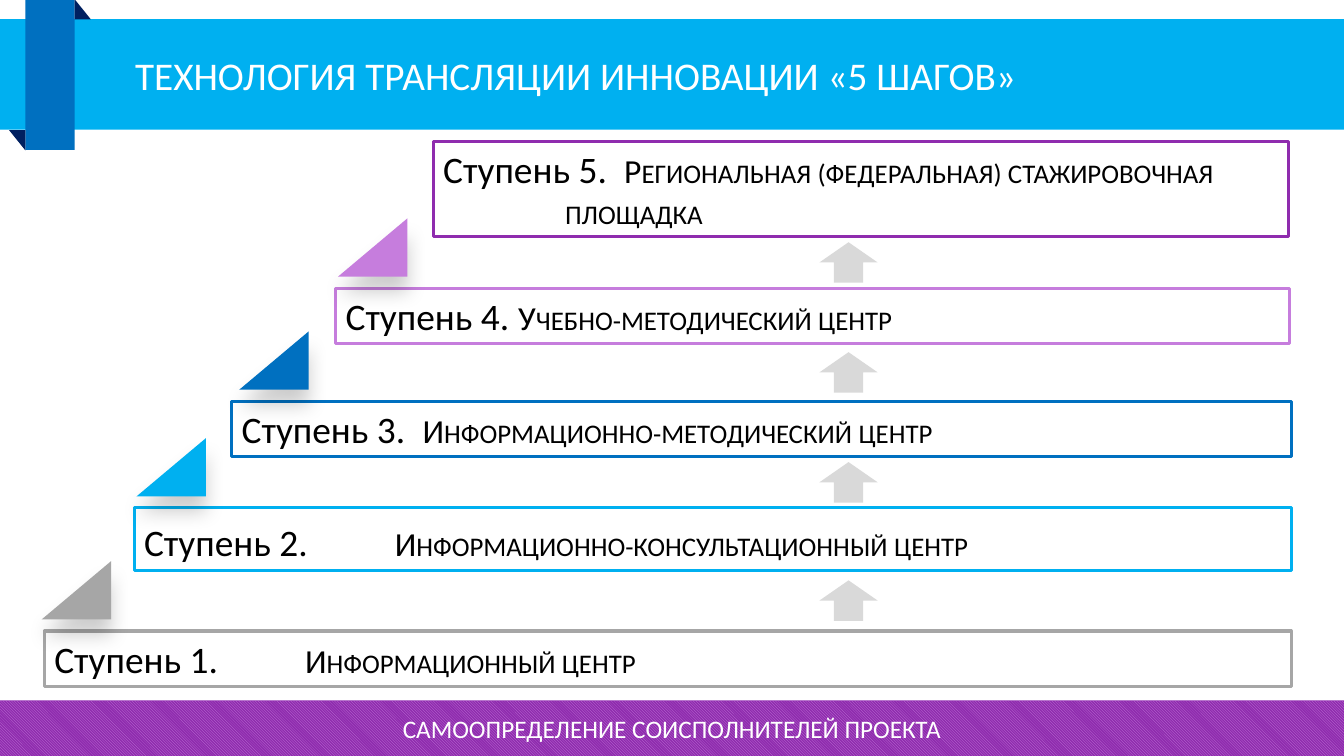
from lxml import etree
from pptx import Presentation
from pptx.dml.color import RGBColor
from pptx.enum.dml import MSO_PATTERN
from pptx.enum.shapes import MSO_SHAPE
from pptx.enum.text import MSO_ANCHOR, PP_ALIGN
from pptx.oxml.ns import qn
from pptx.util import Cm, Pt

RECTANGLE = MSO_SHAPE.RECTANGLE
TRIANGLE = MSO_SHAPE.ISOSCELES_TRIANGLE
CORNER = MSO_SHAPE.RIGHT_TRIANGLE
ARROW = MSO_SHAPE.UP_ARROW
MIDDLE = MSO_ANCHOR.MIDDLE
LEFT, CENTER = PP_ALIGN.LEFT, PP_ALIGN.CENTER
FONT = "Calibri"

COLORS = {
    "white": "FFFFFF", "black": "000000", "gray": "A6A6A6", "light gray": "D9D9D9",
    "sky": "00B0F0", "blue": "0070C0", "navy": "002060",
    "lilac": "C67DDD", "purple": "8F2CAE",
}

TITLE = "ТЕХНОЛОГИЯ ТРАНСЛЯЦИИ ИННОВАЦИИ «5 ШАГОВ»"
FOOTER = "САМООПРЕДЕЛЕНИЕ СОИСПОЛНИТЕЛЕЙ ПРОЕКТА"

# Label, gap (text, size, extra spacing), name, hanging indent in cm
STEP_TEXTS = [
    ("Ступень 1.", ("\t", 26.7, 0), "Информационный центр", 6.32),
    ("Ступень 2.", ("\t", 30.7, 0), "Информационно-консультационный центр", 6.32),
    ("Ступень 3.", (" ", 26.7, 6), "Информационно-методический центр", 6.32),
    ("Ступень 4.", (" ", 26.7, 0), "Учебно-методический центр", 6.32),
    ("Ступень 5.", (" ", 26.7, 6),
     "Региональная (федеральная) стажировочная площадка", 3.07),
]
# Color, box (left, top, width, height) in cm, left of the corner above it
STEP_BOXES = [
    ("gray", (1.12, 15.9, 31.42, 1.4), 1.19),
    ("sky", (3.38, 12.8, 29.16, 1.57), 3.58),
    ("blue", (5.84, 10.11, 26.7, 1.4), 6.17),
    ("lilac", (8.46, 7.26, 24.03, 1.4), 8.66),
    ("purple", (10.92, 3.56, 21.56, 2.41), None),
]
CORNER_WIDTH, CORNER_HEIGHT, CORNER_RISE = 1.47, 1.75, 1.9
ARROW_LEFT, ARROW_WIDTH, ARROW_HEIGHT = 20.65, 1.47, 1.02
# Kind, place in cm, color, rotation
RIBBON = [
    (RECTANGLE, (0, 0.48, 33.87, 2.79), "sky", 0),
    (RECTANGLE, (0.64, 0, 1.24, 3.78), "blue", 0),
    (TRIANGLE, (0.18, 3.33, 0.51, 0.41), "navy", 270),
    (TRIANGLE, (1.83, 0.03, 0.51, 0.41), "navy", 90),
]


def color(name):
    return RGBColor.from_string(COLORS[name])


def add_shape(kind, place, fill, rotation=0):
    shape = slide.shapes.add_shape(kind, *map(Cm, place))
    shape.shadow.inherit = False
    shape.fill.solid()
    shape.fill.fore_color.rgb = color(fill)
    shape.line.fill.background()
    shape.rotation = rotation
    if kind == TRIANGLE:
        shape.adjustments[0] = 1
    return shape


def add_shadow(shape):
    effects = shape._element.spPr.find(qn("a:effectLst"))
    shadow = etree.SubElement(
        effects, qn("a:outerShdw"), blurRad=str(Pt(14)), dist=str(Pt(11)),
        dir="5400000", algn="ctr", rotWithShape="0")
    black = etree.SubElement(shadow, qn("a:srgbClr"), val=COLORS["black"])
    etree.SubElement(black, qn("a:alpha"), val="20000")


def format_run(run, size, color_name):
    run.font.name = FONT
    run.font.size = Pt(size)
    run.font.bold = False
    run.font.color.rgb = color(color_name)


def write_step(shape, label, gap, name, indent):
    frame = shape.text_frame
    frame.word_wrap = True
    frame.vertical_anchor = MIDDLE
    paragraph = frame.paragraphs[0]
    paragraph.alignment = LEFT
    properties = paragraph._p.get_or_add_pPr()
    properties.set("marL", str(Cm(indent)))
    properties.set("indent", str(-Cm(indent)))
    gap_text, gap_size, spacing = gap
    for text, size in ((label, 26.7), (gap_text, gap_size), (name, 24)):
        run = paragraph.add_run()
        run.text = text
        format_run(run, size, "black")
        if text == gap_text and spacing:
            run.font._element.set("spc", str(spacing * 100))
    run.font._element.set("cap", "small")


def write_line(shape, text, size, alignment):
    frame = shape.text_frame
    frame.text = text
    frame.word_wrap = True
    frame.vertical_anchor = MIDDLE
    paragraph = frame.paragraphs[0]
    paragraph.alignment = alignment
    format_run(paragraph.runs[0], size, "white")
    return paragraph


presentation = Presentation()
presentation.slide_width = Cm(33.87)
presentation.slide_height = Cm(19.05)
slide = presentation.slides.add_slide(presentation.slide_layouts[5])

# Step boxes
for (fill, place, _), text in zip(STEP_BOXES, STEP_TEXTS):
    box = add_shape(RECTANGLE, place, "white")
    box.line.color.rgb = color(fill)
    box.line.width = Pt(2.25)
    write_step(box, *text)

# Corners and arrows between neighbouring steps
for (fill, lower, corner_left), (_, upper, _) in zip(STEP_BOXES, STEP_BOXES[1:]):
    corner_place = (corner_left, lower[1] - CORNER_RISE, CORNER_WIDTH, CORNER_HEIGHT)
    add_shadow(add_shape(CORNER, corner_place, fill, 270))
    gap_middle = (upper[1] + upper[3] + lower[1]) / 2
    add_shape(ARROW, (ARROW_LEFT, gap_middle - ARROW_HEIGHT / 2,
                      ARROW_WIDTH, ARROW_HEIGHT), "light gray")

# Title ribbon
for part in RIBBON:
    add_shape(*part)

# Title, moved in front of the ribbon
title = slide.shapes.title
slide.shapes._spTree.append(title._element)
title.left, title.top, title.width, title.height = map(Cm, (1.88, 0.53, 30.12, 2.72))
title_paragraph = write_line(title, TITLE, 28, LEFT)
title_paragraph._p.get_or_add_pPr().set("marL", str(Cm(1.27)))

# Footer band
band = add_shape(RECTANGLE, (0, 17.65, 33.87, 1.4), "purple")
band.fill.patterned()
band.fill.pattern = MSO_PATTERN.LIGHT_DOWNWARD_DIAGONAL
band.fill.fore_color.rgb = color("lilac")
band.fill.back_color.rgb = color("purple")
footer = slide.shapes.add_textbox(*map(Cm, (0, 17.45, 33.87, 1.8)))
write_line(footer, FOOTER, 18, CENTER)

presentation.save("out.pptx")
